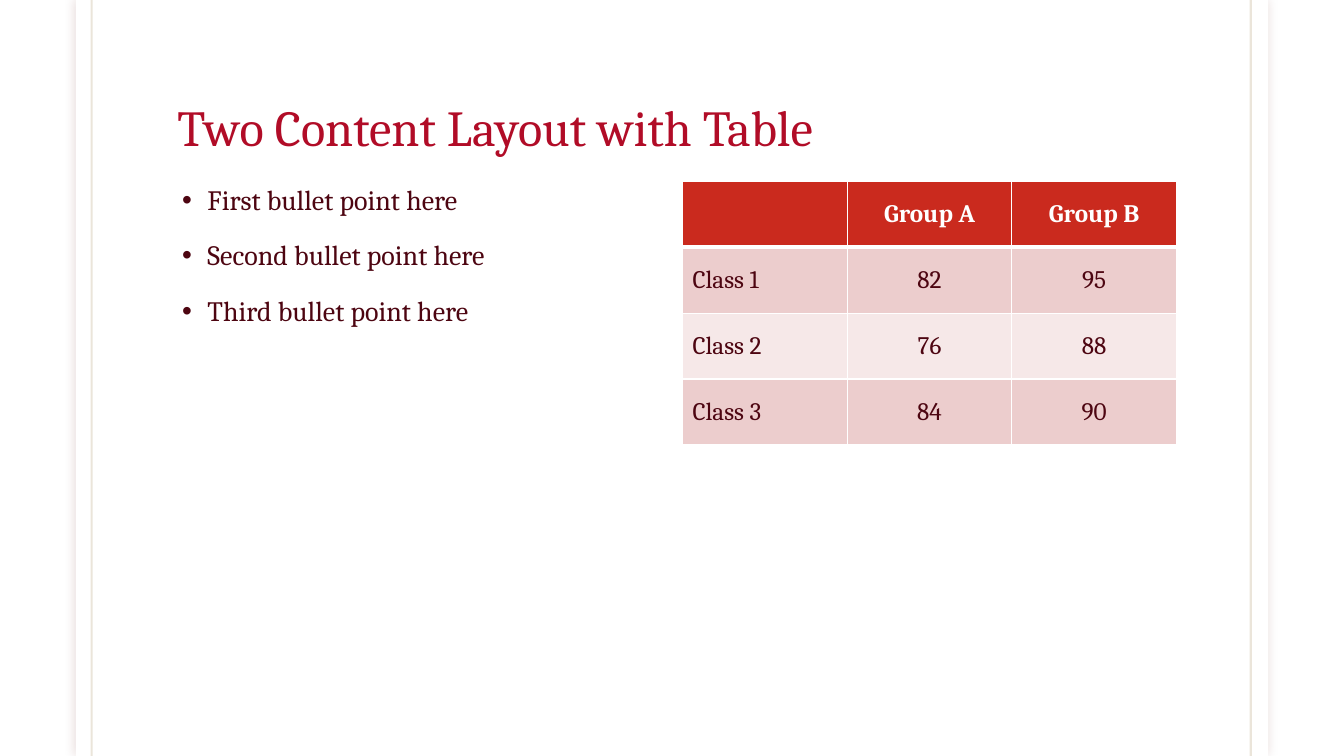
from lxml import etree
from pptx import Presentation
from pptx.dml.color import RGBColor
from pptx.enum import shapes, text
from pptx.oxml import parse_xml
from pptx.oxml.ns import nsdecls, qn
from pptx.util import Cm, Pt

WHITE = RGBColor(0xFF, 0xFF, 0xFF)
CRIMSON = RGBColor(0xB1, 0x0C, 0x27)
MAROON = RGBColor(0x4D, 0x05, 0x11)
GOLD = RGBColor(0x79, 0x54, 0x0B)
HEADER_RED = RGBColor(0xCA, 0x2A, 0x1E)
BANDS = [RGBColor(0xF6, 0xE8, 0xE8), RGBColor(0xEC, 0xCD, 0xCD)]
SHADOW = RGBColor(0x65, 0x15, 0x0F)

HEIGHT = Cm(19.05)
CONTENT_LEFT, CONTENT_TOP, COLUMN_WIDTH = Cm(4.22), Cm(4.57), Cm(12.45)


def style_font(paragraph, size, color, bold=False):
    settings = {"name": "Cambria", "size": Pt(size), "bold": bold}
    for name, value in settings.items():
        setattr(paragraph.font, name, value)
    paragraph.font.color.rgb = color


def add_text_box(left, top, width, height, anchor):
    frame = slide.shapes.add_textbox(left, top, width, height).text_frame
    frame.word_wrap = True
    frame.vertical_anchor = anchor
    return frame


presentation = Presentation()
presentation.slide_width, presentation.slide_height = Cm(33.87), HEIGHT
slide = presentation.slides.add_slide(presentation.slide_layouts[6])

# Page panel with a soft glow and two edge rules
panel = slide.shapes.add_shape(
    shapes.MSO_SHAPE.RECTANGLE, Cm(1.91), 0, Cm(30.05), HEIGHT)
panel.fill.solid()
panel.fill.fore_color.rgb = WHITE
panel.line.fill.background()
panel.shadow.inherit = False
effects = panel.element.spPr.find(qn("a:effectLst"))
effects.append(parse_xml(
    f'<a:outerShdw {nsdecls("a")} blurRad="{Pt(7)}" dist="0" dir="0" algn="ctr" '
    f'rotWithShape="0"><a:srgbClr val="{SHADOW}"><a:alpha val="15000"/>'
    '</a:srgbClr></a:outerShdw>'))

for x in (Cm(2.31), Cm(31.52)):
    rule = slide.shapes.add_connector(shapes.MSO_CONNECTOR.STRAIGHT, x, 0, x, HEIGHT)
    rule.line.width = Pt(1.5)
    rule.line.color.rgb = GOLD
    properties = rule.element.spPr
    color = next(properties.iter(qn("a:srgbClr")))
    etree.SubElement(color, qn("a:alpha"), val="15000")
    etree.SubElement(properties, qn("a:effectLst"))

# Title
title = add_text_box(CONTENT_LEFT, Cm(0.89), Cm(25.4), Cm(3.18),
                     text.MSO_ANCHOR.BOTTOM).paragraphs[0]
title.text = "Two Content Layout with Table"
title.line_spacing = 0.85
style_font(title, 36, CRIMSON)

# Bullets
body = add_text_box(CONTENT_LEFT, CONTENT_TOP, COLUMN_WIDTH, Cm(12.57),
                    text.MSO_ANCHOR.TOP)
for index, ordinal in enumerate(["First", "Second", "Third"]):
    paragraph = body.add_paragraph() if index else body.paragraphs[0]
    paragraph.text = f"{ordinal} bullet point here"
    paragraph.line_spacing = 0.9
    paragraph.space_before = Pt(18 if index else 0)
    properties = paragraph._p.get_or_add_pPr()
    properties.set("marL", str(Cm(0.76)))
    properties.set("indent", str(Cm(-0.64)))
    bullet_color = etree.SubElement(properties, qn("a:buClr"))
    etree.SubElement(bullet_color, qn("a:srgbClr"), val=str(MAROON))
    etree.SubElement(properties, qn("a:buFont"), typeface="Arial")
    etree.SubElement(properties, qn("a:buChar"), char="•")
    style_font(paragraph, 20, MAROON)

# Table
scores = [
    ["", "Group A", "Group B"],
    ["Class 1", "82", "95"],
    ["Class 2", "76", "88"],
    ["Class 3", "84", "90"],
]
ROW_HEIGHT = Cm(1.66)
table = slide.shapes.add_table(
    len(scores), len(scores[0]), Cm(17.2), CONTENT_TOP, COLUMN_WIDTH,
    ROW_HEIGHT * len(scores)).table
for row, values in enumerate(scores):
    header = row == 0
    for column, value in enumerate(values):
        cell = table.cell(row, column)
        cell.text = value
        cell.vertical_anchor = text.MSO_ANCHOR.MIDDLE
        cell.fill.solid()
        cell.fill.fore_color.rgb = HEADER_RED if header else BANDS[row % 2]
        paragraph = cell.text_frame.paragraphs[0]
        paragraph.alignment = text.PP_ALIGN.CENTER if column else text.PP_ALIGN.LEFT
        style_font(paragraph, 18, WHITE if header else MAROON, header)
        borders = {"L": 1, "R": 1, "T": 3 if row == 1 else 1, "B": 3 if header else 1}
        for position, (side, width) in enumerate(borders.items()):
            cell._tc.get_or_add_tcPr().insert(position, parse_xml(
                f'<a:ln{side} {nsdecls("a")} w="{Pt(width)}"><a:solidFill>'
                f'<a:srgbClr val="{WHITE}"/></a:solidFill></a:ln{side}>'))

presentation.save("out.pptx")
